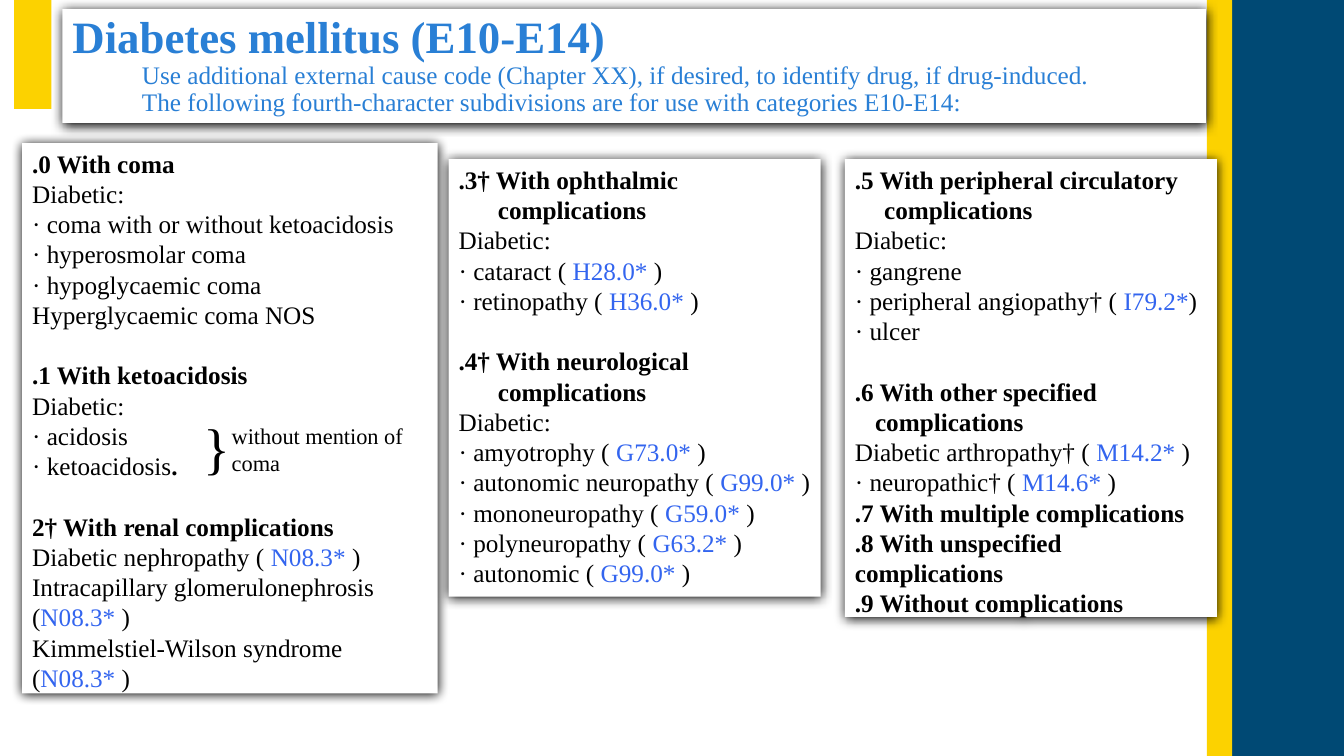
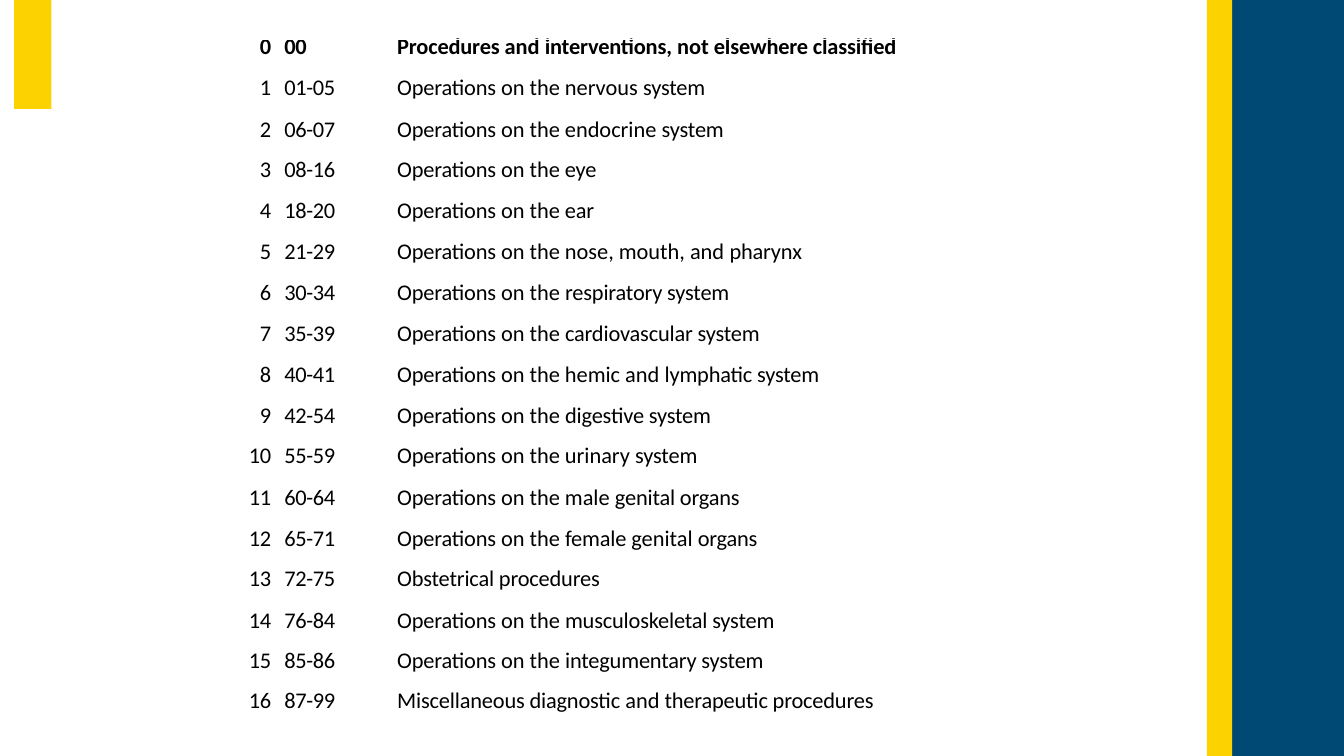
from dataclasses import dataclass

from lxml.etree import SubElement
from pptx import Presentation
from pptx.dml.color import RGBColor
from pptx.enum.shapes import MSO_SHAPE as Preset
from pptx.enum.text import MSO_ANCHOR as Anchor, PP_ALIGN as Align
from pptx.oxml.ns import qn
from pptx.util import Pt

PX = 9144  # EMU per px, 100 px to the inch
SLIDE_W, SLIDE_H = 1333, 750


@dataclass(frozen=True)
class Theme:
    yellow: str = "FCD200"
    navy: str = "004974"
    white: str = "FFFFFF"
    black: str = "000000"
    title_blue: str = "297FD5"
    code_blue: str = "3365EF"
    serif: str = "Times New Roman"
    sans: str = "Calibri"
    title_size: int = 32
    body_size: int = 18
    small_size: int = 16
    brace_size: int = 40
    body_gap: float = 21.6  # one empty body line


THEME = Theme()


@dataclass(frozen=True)
class Run:
    text: str
    color: str = THEME.black
    bold: bool = False
    size: int = THEME.body_size
    font: str = THEME.serif
    tracking: int = 0  # hundredths of a point


@dataclass(frozen=True)
class Line:
    runs: tuple
    left: int = 0
    hang: int = 0
    gap: float = 0
    spacing: float | None = None


# Kinds of line
def heading(text, hang=0, gap=0):
    return Line((Run(text, bold=True),), hang, hang, gap)


def plain(text):
    return Line((Run(text),))


def coded(text, code):
    return Line((Run(text), Run(code, THEME.code_blue), Run(")")))


def title_line(text, size=THEME.body_size, bold=False, left=0):
    run = Run(text, THEME.title_blue, bold, size)
    return Line((run,), left, spacing=0.9)


# Content
TITLE = (
    title_line("Diabetes mellitus (E10-E14)", THEME.title_size, bold=True),
    title_line("Use additional external cause code (Chapter XX), if desired, "
               "to identify drug, if drug-induced.", left=69),
    title_line("The following fourth-character subdivisions are for use with "
               "categories E10-E14:", left=69),
)
COMA_TO_RENAL = (
    heading(".0 With coma"),
    plain("Diabetic:"),
    plain("· coma with or without ketoacidosis"),
    plain("· hyperosmolar coma"),
    plain("· hypoglycaemic coma"),
    plain("Hyperglycaemic coma NOS"),
    heading(".1 With ketoacidosis", gap=THEME.body_gap),
    plain("Diabetic:"),
    plain("· acidosis"),
    Line((Run("· ketoacidosis"), Run(".", bold=True))),
    heading("2† With renal complications", gap=THEME.body_gap),
    coded("Diabetic nephropathy ( ", "N08.3* "),
    coded("Intracapillary glomerulonephrosis (", "N08.3* "),
    coded("Kimmelstiel-Wilson syndrome (", "N08.3* "),
)
EYE_AND_NERVE = (
    heading(".3† With ophthalmic complications", hang=39),
    plain("Diabetic:"),
    coded("· cataract ( ", "H28.0* "),
    coded("· retinopathy ( ", "H36.0* "),
    heading(".4† With neurological complications", hang=39, gap=THEME.body_gap),
    plain("Diabetic:"),
    coded("· amyotrophy ( ", "G73.0* "),
    coded("· autonomic neuropathy ( ", "G99.0* "),
    coded("· mononeuropathy ( ", "G59.0* "),
    coded("· polyneuropathy ( ", "G63.2* "),
    coded("· autonomic ( ", "G99.0* "),
)
CIRCULATORY_AND_OTHER = (
    heading(".5 With peripheral circulatory complications", hang=29),
    plain("Diabetic:"),
    plain("· gangrene"),
    coded("· peripheral angiopathy† ( ", "I79.2*"),
    plain("· ulcer"),
    heading(".6 With other specified complications", hang=20, gap=THEME.body_gap),
    coded("Diabetic arthropathy† ( ", "M14.2* "),
    coded("· neuropathic† ( ", "M14.6* "),
    heading(".7 With multiple complications"),
    heading(".8 With unspecified complications"),
    heading(".9 Without complications"),
)
# "|" separates tightly and normally tracked runs, tight first
PROCEDURES = (
    ("00", "Procedures |and |interventions, |not |elsewhere classified"),
    ("01-05", "Operations |on the nervous |system"),
    ("06-07", "Operations |on the endocrine |system"),
    ("08-16", "Operations |on the| eye"),
    ("18-20", "Operations |on the| ear"),
    ("21-29", "Operations |on the nose, mouth, and |pharynx"),
    ("30-34", "Operations |on the |respiratory system"),
    ("35-39", "Operations |on the |cardiovascular system"),
    ("40-41", "Operations |on the hemic and |lymphatic system"),
    ("42-54", "Operations |on the |digestive system"),
    ("55-59", "Operations |on the urinary |system"),
    ("60-64", "Operations |on the male |genital organs"),
    ("65-71", "Operations |on the |female |genital |organs"),
    ("72-75", "Obstetrical procedures"),
    ("76-84", "Operations |on the |musculoskeletal system"),
    ("85-86", "Operations |on the |integumentary system"),
    ("87-99", "Miscellaneous diagnostic |and |therapeutic procedures"),
)


# Text
def fill_paragraph(paragraph, line, align=Align.LEFT):
    if line.left:
        props = paragraph._p.get_or_add_pPr()
        props.set("marL", str(line.left * PX))
        props.set("indent", str(-line.hang * PX))
    paragraph.alignment = align
    if line.gap:
        paragraph.space_before = Pt(line.gap)
    if line.spacing:
        paragraph.line_spacing = line.spacing
    for part in line.runs:
        run = paragraph.add_run()
        run.text = part.text
        run.font.name = part.font
        run.font.size = Pt(part.size)
        run.font.bold = part.bold
        run.font.color.rgb = RGBColor.from_string(part.color)
        if part.tracking:
            run._r.get_or_add_rPr().set("spc", str(part.tracking))


def write_lines(frame, lines, anchor=Anchor.TOP):
    frame.word_wrap = True
    frame.vertical_anchor = anchor
    frame.margin_left = frame.margin_right = 10 * PX
    frame.margin_top = frame.margin_bottom = 5 * PX
    for i, line in enumerate(lines):
        paragraph = frame.add_paragraph() if i else frame.paragraphs[0]
        fill_paragraph(paragraph, line)


# Shapes
def add_block(slide, box, color):
    block = slide.shapes.add_shape(Preset.RECTANGLE, *(v * PX for v in box))
    block.fill.solid()
    block.fill.fore_color.rgb = RGBColor.from_string(color)
    block.line.fill.background()
    block.shadow.inherit = False
    return block


def add_card(slide, box, lines, anchor=Anchor.TOP):
    card = add_block(slide, box, THEME.white)
    effects = card._element.spPr.find(qn("a:effectLst"))
    shadow = SubElement(effects, qn("a:outerShdw"), blurRad=str(Pt(8.5)),
                        dist=str(Pt(1)), dir="5400000", algn="t", rotWithShape="0")
    SubElement(shadow, qn("a:srgbClr"), val=THEME.black)
    write_lines(card.text_frame, lines, anchor)


def add_label(slide, box, text, size):
    label = slide.shapes.add_textbox(*(v * PX for v in box))
    write_lines(label.text_frame, (Line((Run(text, size=size),)),))


def add_banded_slide(deck):
    slide = deck.slides.add_slide(deck.slide_layouts[6])
    add_block(slide, (14, 0, 37, 108), THEME.yellow)
    add_block(slide, (1222, 0, SLIDE_W - 1222, SLIDE_H), THEME.navy)
    add_block(slide, (1197, 0, 25, SLIDE_H), THEME.yellow)
    return slide


# Table
def fill_cell(cell, line, margins, align):
    cell.fill.background()
    cell.margin_left, cell.margin_right, cell.margin_top = (m * PX for m in margins)
    cell.margin_bottom = 0
    fill_paragraph(cell.text_frame.paragraphs[0], line, align)


def tracked_runs(parts, trackings, bold):
    return tuple(Run(text, bold=bold, size=THEME.small_size, font=THEME.sans,
                     tracking=tracking) for text, tracking in zip(parts, trackings))


def add_procedure_table(slide, left, top):
    widths = (33, 89, 537)
    edge_height, inner_height = 31, 609
    last = len(PROCEDURES) - 1
    stops = [round(inner_height * i / (last - 1)) for i in range(last)]
    heights = [edge_height, *(b - a for a, b in zip(stops, stops[1:])), edge_height]
    table = slide.shapes.add_table(
        len(heights), len(widths), left * PX, top * PX,
        sum(widths) * PX, sum(heights) * PX).table
    table.first_row = table.horz_banding = False
    for column, width in zip(table.columns, widths):
        column.width = width * PX
    for i, (codes, procedure) in enumerate(PROCEDURES):
        table.rows[i].height = heights[i] * PX
        bold = i == 0
        spacing = {0: Pt(15.2), last: Pt(19)}.get(i)
        inset = 0 if bold else 4
        parts = procedure.split("|")
        cells = (
            ((str(i),), (-20 if i > 9 else 0,), (0, 6), Align.RIGHT),
            ((codes,), (-20,), (7, 0), Align.LEFT),
            (parts, (-10, 0) * len(parts), (30, 0), Align.LEFT),
        )
        for j, (texts, trackings, sides, align) in enumerate(cells):
            line = Line(tracked_runs(texts, trackings, bold), spacing=spacing)
            fill_cell(table.cell(i, j), line, (*sides, inset), align)


def main():
    deck = Presentation()
    deck.slide_width, deck.slide_height = SLIDE_W * PX, SLIDE_H * PX

    # Diabetes subdivisions
    diabetes = add_banded_slide(deck)
    add_card(diabetes, (62, 9, 1134, 113), TITLE, Anchor.MIDDLE)
    add_card(diabetes, (22, 142, 412, 546), COMA_TO_RENAL)
    add_card(diabetes, (838, 158, 369, 454), CIRCULATORY_AND_OTHER)
    add_label(diabetes, (192, 404, 28, 77), "}", THEME.brace_size)
    add_label(diabetes, (220, 414, 203, 64), "without mention of coma", THEME.small_size)
    add_card(diabetes, (445, 158, 369, 434), EYE_AND_NERVE)

    # Procedure chapters
    add_procedure_table(add_banded_slide(deck), 242, 39)

    deck.save("out.pptx")


if __name__ == "__main__":
    main()
